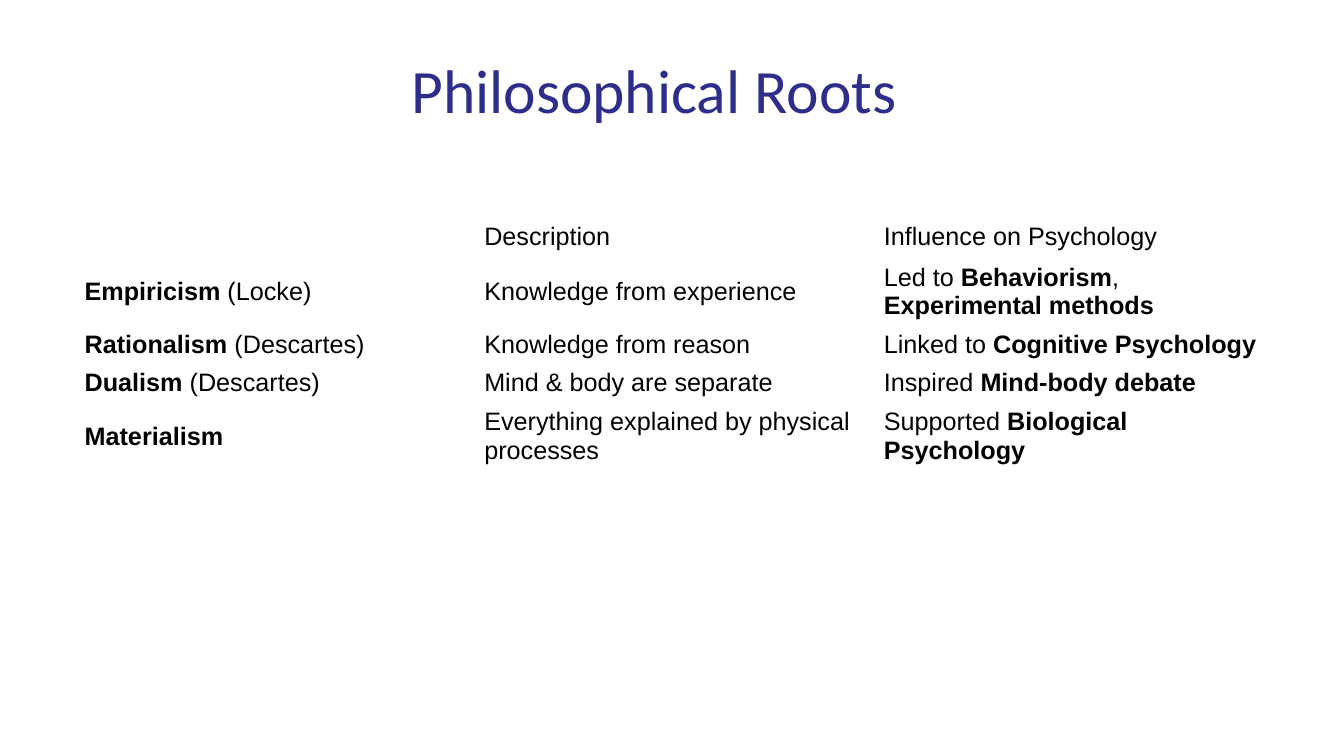
from dataclasses import dataclass

from pptx import Presentation
from pptx.dml.color import RGBColor
from pptx.enum.text import MSO_ANCHOR as Anchor, PP_ALIGN as Align
from pptx.slide import Slide
from pptx.table import _Cell as Cell
from pptx.util import Cm, Pt


@dataclass(frozen=True)
class Theme:
    title_font: str = "Calibri"
    title_size: Pt = Pt(44)
    title_color: RGBColor = RGBColor(0x2D, 0x2D, 0x8A)
    body_font: str = "Arial"
    body_size: Pt = Pt(18)
    body_color: RGBColor = RGBColor(0, 0, 0)


@dataclass(frozen=True)
class Span:
    text: str
    bold: bool = False


@dataclass(frozen=True)
class Row:
    height: Cm
    school: list[Span]
    description: list[Span]
    influence: list[Span]


THEME = Theme()
LEFT = Cm(1.88)
COLUMN_WIDTH = Cm(10.07)
HEADER, ONE_LINE, TWO_LINES = Cm(1.03), Cm(0.97), Cm(1.71)

ROWS = [
    Row(HEADER, [], [Span("Description")], [Span("Influence on Psychology")]),
    Row(TWO_LINES, [Span("Empiricism", True), Span(" (Locke)")],
        [Span("Knowledge from experience")],
        [Span("Led to "), Span("Behaviorism", True), Span(", "),
         Span("Experimental methods", True)]),
    Row(ONE_LINE, [Span("Rationalism", True), Span(" (Descartes)")],
        [Span("Knowledge from reason")],
        [Span("Linked to "), Span("Cognitive Psychology", True)]),
    Row(ONE_LINE, [Span("Dualism", True), Span(" (Descartes)")],
        [Span("Mind & body are separate")],
        [Span("Inspired "), Span("Mind-body debate", True)]),
    Row(TWO_LINES, [Span("Materialism", True)],
        [Span("Everything explained by physical processes")],
        [Span("Supported "), Span("Biological Psychology", True)]),
]


def add_title(page: Slide, text: str) -> None:
    title = page.shapes.title
    title.left, title.top, title.width, title.height = LEFT, Cm(0.41), Cm(29.21), Cm(3.68)
    title.text_frame.text = text
    title.text_frame.vertical_anchor = Anchor.MIDDLE
    para = title.text_frame.paragraphs[0]
    para.alignment = Align.CENTER
    font = para.runs[0].font
    font.name, font.size = THEME.title_font, THEME.title_size
    font.color.rgb = THEME.title_color


def fill_cell(cell: Cell, spans: list[Span]) -> None:
    cell.fill.background()
    cell.vertical_anchor = Anchor.MIDDLE
    para = cell.text_frame.paragraphs[0]
    for span in spans:
        run = para.add_run()
        run.text = span.text
        font = run.font
        font.name, font.size, font.bold = THEME.body_font, THEME.body_size, span.bold
        font.color.rgb = THEME.body_color


def add_schools_table(page: Slide, rows: list[Row]) -> None:
    height = sum(row.height for row in rows)
    table = page.shapes.add_table(
        len(rows), 3, LEFT, Cm(5.46), COLUMN_WIDTH * 3, height).table
    table.first_row = table.horz_banding = False
    for column in table.columns:
        column.width = COLUMN_WIDTH
    for row, line in zip(rows, table.rows):
        line.height = row.height
        for cell, spans in zip(line.cells, (row.school, row.description, row.influence)):
            fill_cell(cell, spans)


def main() -> None:
    deck = Presentation()
    deck.slide_width, deck.slide_height = Cm(33.87), Cm(19.05)
    page = deck.slides.add_slide(deck.slide_layouts[5])
    add_title(page, "Philosophical Roots")
    add_schools_table(page, ROWS)
    deck.save("out.pptx")


if __name__ == "__main__":
    main()
